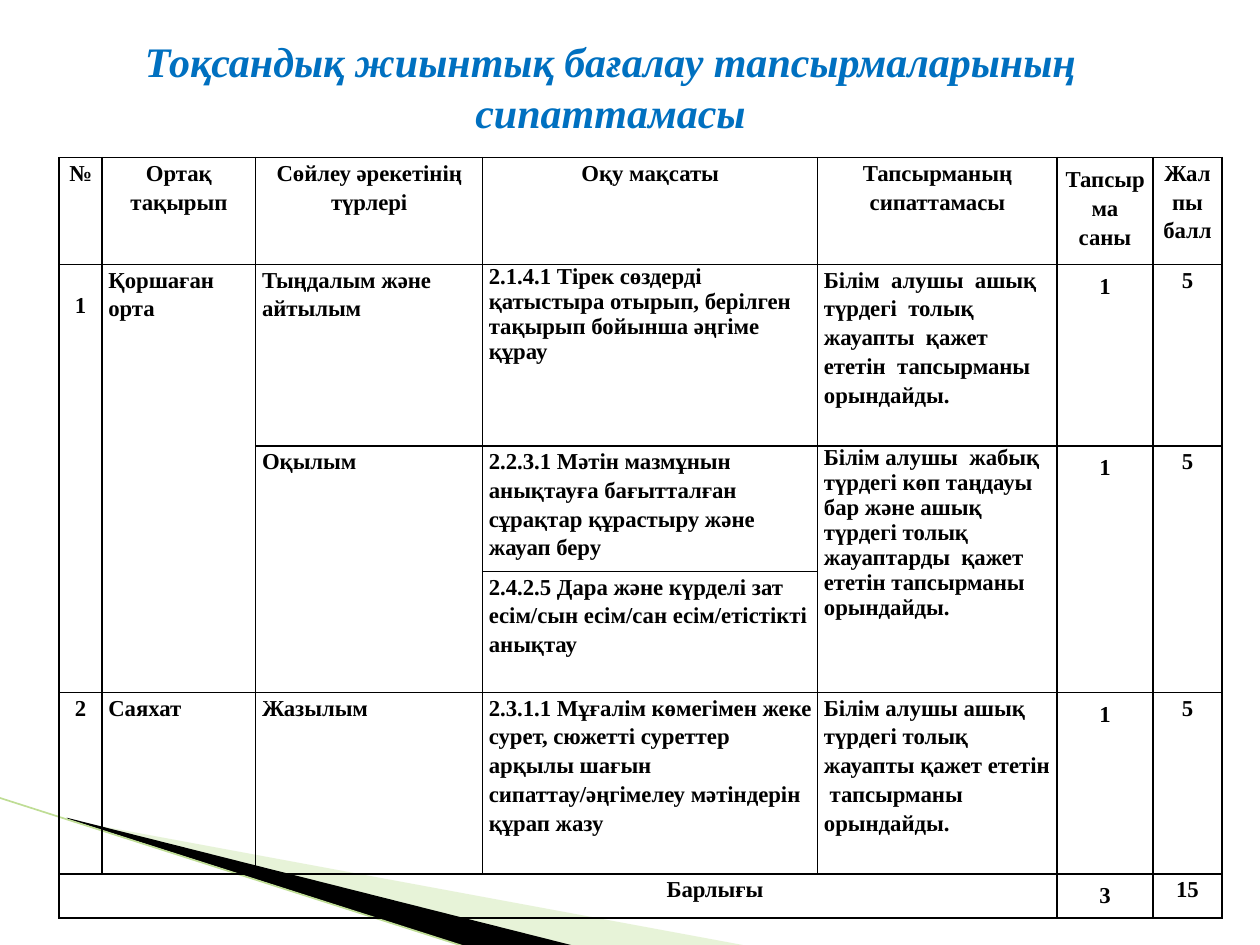
from dataclasses import dataclass

from lxml import etree
from pptx import Presentation
from pptx import util as u
from pptx.dml.color import RGBColor
from pptx.enum import shapes, text
from pptx.oxml.ns import qn

IN = u.Inches
LEFT, MID = text.PP_ALIGN.LEFT, text.PP_ALIGN.CENTER


@dataclass
class Theme:
    font: str = "Times New Roman"
    blue: str = "0070C0"
    ink: str = "000000"
    pale: str = "C5E19F"
    edge: str = "BFDD95"
    head: int = 24
    body: int = 13
    rule: float = 1
    thin: float = 0.95
    lead: float = 1.15
    pad: float = 0.05


class Deck:
    def __init__(self, slide, theme):
        self.slide, self.theme = slide, theme

    def color(self, name):
        return RGBColor.from_string(name)

    def style(self, para, size, color, italic=None):
        font = para.font
        font.name, font.size = self.theme.font, u.Pt(size)
        font.bold, font.italic = True, italic
        font.color.rgb = self.color(color)

    def wedge(self, points, color, alpha=None):
        start, *rest = [(IN(x), IN(y)) for x, y in points]
        form = self.slide.shapes.build_freeform(*start)
        form.add_line_segments(rest, close=True)
        shape = form.convert_to_shape()
        shape.shadow.inherit = False
        shape.fill.solid()
        shape.fill.fore_color.rgb = self.color(color)
        shape.line.fill.background()
        if alpha:
            tint = shape.fill._xPr.find(".//" + qn("a:srgbClr"))
            etree.SubElement(tint, qn("a:alpha"), val=str(alpha * 1000))

    def line(self, x1, y1, x2, y2):
        line = self.slide.shapes.add_connector(
            shapes.MSO_CONNECTOR.STRAIGHT, IN(x1), IN(y1), IN(x2), IN(y2))
        line.line.color.rgb = self.color(self.theme.edge)
        line.line.width = u.Pt(self.theme.thin)
        etree.SubElement(line._element.spPr, qn("a:effectLst"))

    def title(self, words, *box):
        frame = self.slide.shapes.add_textbox(*map(IN, box)).text_frame
        frame.word_wrap = True
        frame.vertical_anchor = text.MSO_ANCHOR.MIDDLE
        para = frame.paragraphs[0]
        para.text, para.alignment = words, MID
        self.style(para, self.theme.head, self.theme.blue, True)

    def border(self, cell):
        props = cell._tc.get_or_add_tcPr()
        for side in "LRTB":
            line = etree.SubElement(props, qn("a:ln" + side),
                                    w=str(u.Pt(self.theme.rule)))
            fill = etree.SubElement(line, qn("a:solidFill"))
            etree.SubElement(fill, qn("a:srgbClr"), val=self.theme.ink)

    def table(self, x, y, cols, rows):
        grid = self.slide.shapes.add_table(
            len(rows), len(cols), IN(x), IN(y), IN(sum(cols)), IN(sum(rows))).table
        grid.first_row = grid.horz_banding = False
        for col, width in zip(grid.columns, cols):
            col.width = IN(width)
        for row, height in zip(grid.rows, rows):
            row.height = IN(height)
        for cell in grid.iter_cells():
            self.border(cell)
            cell.fill.background()
            cell.margin_left = cell.margin_right = IN(self.theme.pad)
            cell.margin_top = cell.margin_bottom = 0
            self.style(cell.text_frame.paragraphs[0], self.theme.body, self.theme.ink)
        return grid

    def cell(self, cell, words, align, lead, pad):
        para = cell.text_frame.paragraphs[0]
        para.text, para.alignment = words, align
        if lead:
            para.line_spacing = lead
        cell.margin_top = cell.margin_bottom = IN(pad)


# Table content; None marks a cell covered by a merge
ROWS = [
    ["№", "Ортақ тақырып", "Сөйлеу әрекетінің түрлері", "Оқу мақсаты",
     "Тапсырманың сипаттамасы", "Тапсырма саны", "Жалпы балл"],
    ["1", "Қоршаған орта", "Тыңдалым және айтылым",
     "2.1.4.1 Тірек сөздерді қатыстыра отырып, берілген тақырып бойынша әңгіме құрау",
     "Білім  алушы  ашық түрдегі  толық жауапты  қажет ететін  тапсырманы  орындайды.",
     "1", "5"],
    [None, None, "Оқылым",
     "2.2.3.1 Мәтін мазмұнын анықтауға бағытталған сұрақтар құрастыру және жауап беру",
     "Білім алушы  жабық түрдегі көп таңдауы бар және ашық түрдегі толық "
     "жауаптарды  қажет ететін тапсырманы орындайды.", "1", "5"],
    [None, None, None,
     "2.4.2.5 Дара және күрделі зат есім/сын есім/сан есім/етістікті анықтау",
     None, None, None],
    ["2", "Саяхат", "Жазылым",
     "2.3.1.1 Мұғалім көмегімен жеке сурет, сюжетті суреттер арқылы шағын "
     "сипаттау/әңгімелеу мәтіндерін құрап жазу",
     "Білім алушы ашық түрдегі толық жауапты қажет ететін  тапсырманы  орындайды.",
     "1", "5"],
    ["Барлығы", None, None, None, None, "3", "15"],
]
COLS = [0.34, 1.22, 1.8, 2.66, 1.9, 0.76, 0.55]
HIGH = [0.81, 1.44, 0.96, 0.96, 1.44, 0.33]
SPANS = [(1, 0, 3, 0), (1, 1, 3, 1), (5, 0, 5, 4)]
SPANS += [(2, c, 3, c) for c in (2, 4, 5, 6)]
TIGHT = {(1, 3), (2, 4)}  # cells with single line spacing


def main():
    prs = Presentation()
    prs.slide_width, prs.slide_height = IN(10), IN(7.5)
    theme = Theme()
    deck = Deck(prs.slides.add_slide(prs.slide_layouts[6]), theme)

    # Corner wedges
    deck.wedge([(0.55, 6.51), (5.95, 7.51), (4.56, 7.51), (0.55, 6.5)], theme.pale, 40)
    deck.wedge([(0.53, 6.49), (4.57, 7.51), (3.72, 7.52), (0.54, 6.5)], theme.ink)
    deck.line(-0.01, 6.33, 3.71, 7.52)

    # Title
    deck.title("Тоқсандық жиынтық бағалау тапсырмаларының сипаттамасы",
               0.39, 0.23, 8.91, 0.91)

    # Assessment table
    grid = deck.table(0.47, 1.25, COLS, HIGH)
    for top, left, low, right in SPANS:
        grid.cell(top, left).merge(grid.cell(low, right))
    for r, row in enumerate(ROWS):
        for c, words in enumerate(row):
            if words:
                align = MID if r == 0 or c in (0, 5, 6) else LEFT
                lead = None if (r, c) in TIGHT else theme.lead
                deck.cell(grid.cell(r, c), words, align, lead,
                          theme.pad if c == 5 else 0)

    # First number sits lower; the total is indented
    grid.cell(1, 0).margin_top = IN(0.2)
    para = grid.cell(5, 0).text_frame.paragraphs[0]
    para.alignment = LEFT
    para._p.get_or_add_pPr().set("marL", str(IN(4.77)))

    prs.save("out.pptx")


if __name__ == "__main__":
    main()
